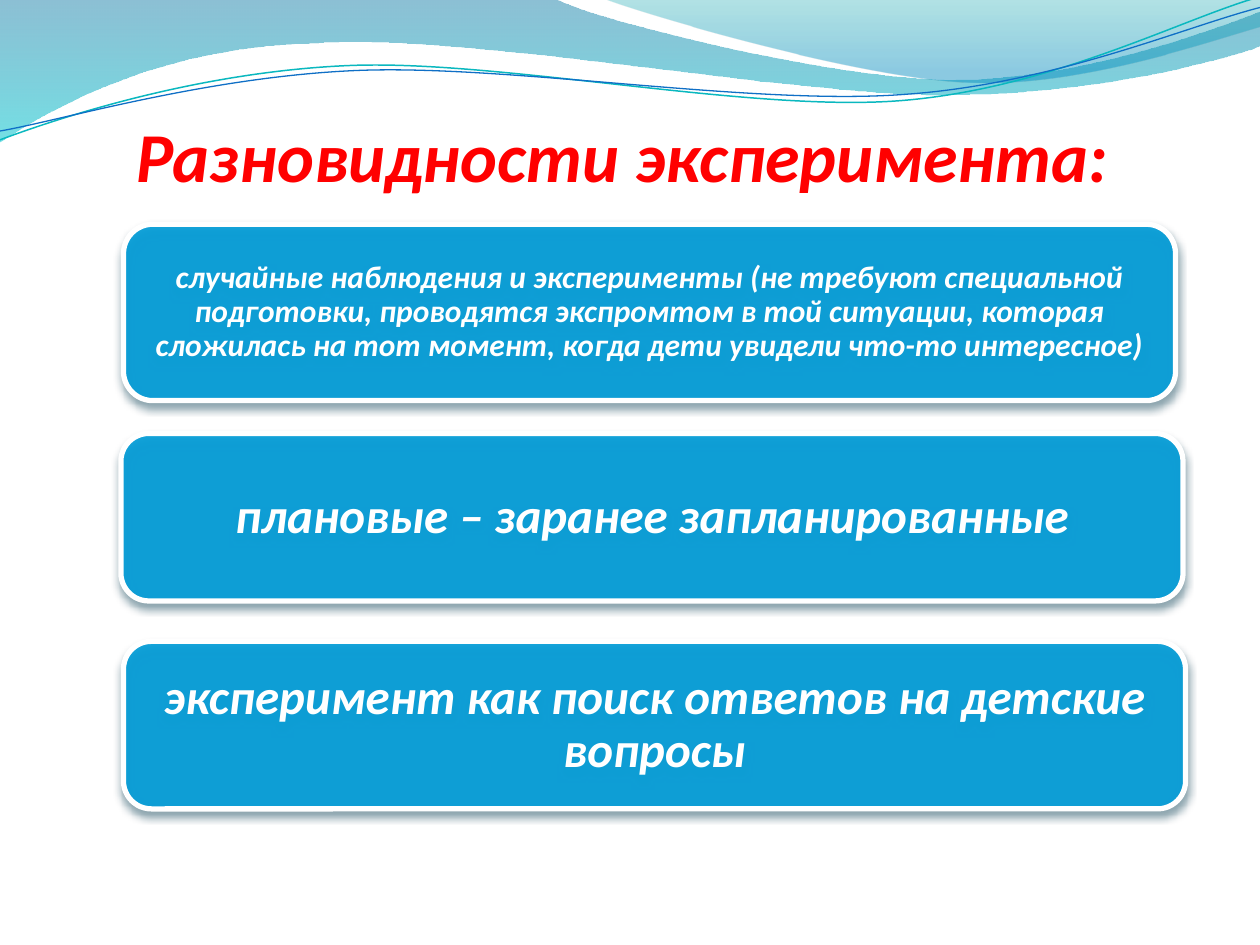
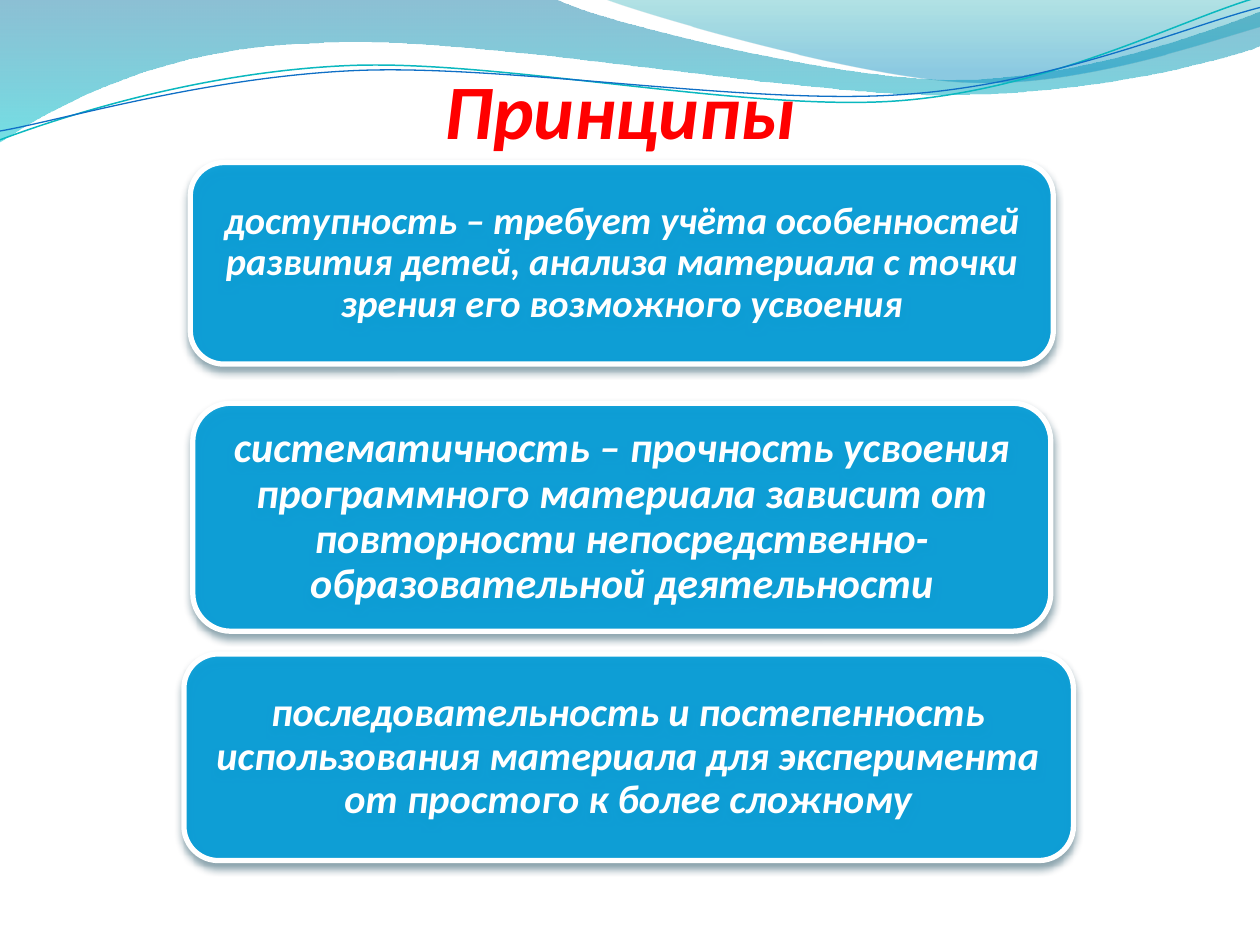
import math
from dataclasses import dataclass

from pptx import Presentation
from pptx import util as u
from pptx.dml import color
from pptx.enum import shapes, text
from pptx.oxml import parse_xml, ns

FONT = "Calibri"
COLORS = {
    "title": "FF0000", "card": "009DD9", "white": "FFFFFF", "shadow": "00374C",
    "band_top": "0074A1", "band_bottom": "00C6CF",
    "crest_top": "00A1A9", "crest_bottom": "008BBF",
    "teal_line": "0AB8BF", "blue_line": "0F6FC6",
}
LINE_TILT = -2.7

Point = tuple[float, float]


@dataclass
class Stop:
    color: str
    position: float
    opacity: int


@dataclass
class Wave:
    """Outline in inches: one point is a line, three points are a Bezier curve."""
    start: Point
    segments: list[tuple[Point, ...]]
    stops: tuple[Stop, ...] = ()
    line: str = ""
    line_width: float = 0
    tilt: float = 0
    pivot: Point = (0, 0)


@dataclass
class Card:
    box: tuple[float, float, float, float]
    text: str
    size: int
    inset: float


@dataclass
class Page:
    title: str
    title_box: tuple[float, float, float, float]
    title_size: int
    cards: list[Card]


WAVES = [
    Wave((0, 0), [
        ((4.4, -0.01),),
        ((4.76, 0.17), (6.64, 0.63), (7.58, 0.63)),
        ((8.53, 0.63), (9.58, 0.26), (10, 0.09)),
        ((10.01, 0.36),),
        ((9.83, 0.44), (8.7, 0.76), (7.46, 0.75)),
        ((6.22, 0.75), (3.82, 0.28), (2.57, 0.34)),
        ((1.29, 0.36), (0.46, 0.83), (-0.01, 1.13)),
        ((0, 0),),
    ], stops=(Stop("band_top", 0, 45), Stop("band_bottom", 1, 55))),
    Wave((4.79, -0.01), [
        ((5.09, 0.11), (6.82, 0.62), (7.69, 0.65)),
        ((8.56, 0.69), (9.61, 0.32), (10, 0.21)),
        ((10, 0),),
        ((4.79, -0.01),),
    ], stops=(Stop("crest_top", 0, 30), Stop("crest_bottom", 0.8, 45))),
    Wave((0, 1.11), [
        ((0.48, 0.93), (1.58, 0.57), (2.77, 0.52)),
        ((3.95, 0.47), (5.93, 0.89), (7.13, 0.8)),
        ((8.33, 0.71), (9.38, 0.15), (9.98, -0.02)),
    ], line="teal_line", line_width=0.85, tilt=LINE_TILT, pivot=(4.99, 0.58)),
    Wave((0, 1.04), [
        ((0.47, 0.96), (1.64, 0.61), (2.83, 0.56)),
        ((4.03, 0.51), (5.97, 0.84), (7.17, 0.75)),
        ((8.36, 0.67), (9.41, 0.21), (10, 0.06)),
    ], line="blue_line", line_width=0.75, tilt=LINE_TILT, pivot=(5, 0.59)),
]

PAGES = [
    Page("Разновидности эксперимента:", (0.98, 0.84, 8, 0.77), 40, [
        Card((0.98, 1.78, 8.35, 1.4),
             "случайные наблюдения и эксперименты (не требуют специальной "
             "подготовки, проводятся экспромтом в той ситуации, которая "
             "сложилась на тот момент, когда дети увидели что-то интересное)",
             18, 0.07),
        Card((0.96, 3.44, 8.43, 1.33), "плановые – заранее запланированные",
             28, 0.12),
        Card((0.98, 5.09, 8.43, 1.33),
             "эксперимент как поиск ответов на детские вопросы", 28, 0.12),
    ]),
    Page("Принципы", (3.43, 0.45, 3.01, 0.84), 44, [
        Card((1.51, 1.29, 6.85, 1.6),
             "доступность – требует учёта особенностей развития детей, "
             "анализа материала с точки зрения его возможного усвоения",
             22, 0.09),
        Card((1.53, 3.2, 6.81, 1.81),
             "систематичность – прочность усвоения программного материала "
             "зависит от повторности непосредственно-образовательной "
             "деятельности", 24, 0.1),
        Card((1.46, 5.19, 7.06, 1.64),
             "последовательность и постепенность использования материала для "
             "эксперимента от простого к более сложному", 23, 0.1),
    ]),
]


def rgb(name: str) -> color.RGBColor:
    return color.RGBColor.from_string(COLORS[name])


def set_opacity(color_element, percent: int) -> None:
    color_element.append(parse_xml(
        f'<a:alpha {ns.nsdecls("a")} val="{percent * 1000}"/>'))


def write_text(frame, words: str, *, size: int, tint: str, align, anchor,
               wrap: bool = True, spacing: float = 1.0) -> None:
    frame.word_wrap = wrap
    frame.vertical_anchor = anchor
    paragraph = frame.paragraphs[0]
    paragraph.alignment = align
    paragraph.line_spacing = spacing
    run = paragraph.add_run()
    run.text = words
    run.font.name = FONT
    run.font.size = u.Pt(size)
    run.font.bold = run.font.italic = True
    run.font.color.rgb = rgb(tint)


def level(point: Point, wave: Wave) -> tuple[u.Length, u.Length]:
    """Place a point as it lies before the wave is tilted about its pivot."""
    angle = math.radians(-wave.tilt)
    dx, dy = point[0] - wave.pivot[0], point[1] - wave.pivot[1]
    return (u.Inches(wave.pivot[0] + dx * math.cos(angle) - dy * math.sin(angle)),
            u.Inches(wave.pivot[1] + dx * math.sin(angle) + dy * math.cos(angle)))


def bend(outline, segments: list[tuple[Point, ...]]) -> None:
    """Join each run of three line points into one Bezier curve."""
    steps = iter(outline.element.xpath(".//a:path/a:lnTo"))
    for segment in segments:
        lines = [next(steps) for _ in segment]
        if len(lines) == 3:
            curve = parse_xml(f'<a:cubicBezTo {ns.nsdecls("a")}/>')
            lines[0].addprevious(curve)
            for line in lines:
                curve.append(line[0])
                line.getparent().remove(line)


def draw_wave(slide, wave: Wave):
    points = [point for segment in wave.segments for point in segment]
    builder = slide.shapes.build_freeform(*level(wave.start, wave))
    builder.add_line_segments([level(point, wave) for point in points],
                              close=bool(wave.stops))
    outline = builder.convert_to_shape()
    bend(outline, wave.segments)
    outline.rotation = wave.tilt
    outline.shadow.inherit = False
    if wave.stops:
        outline.line.fill.background()
        outline.fill.gradient()
        outline.fill.gradient_angle = 270
        for target, stop in zip(outline.fill.gradient_stops, wave.stops):
            target.color.rgb = rgb(stop.color)
            target.position = stop.position
        tints = outline.element.xpath("./p:spPr/a:gradFill//a:srgbClr")
        for tint, stop in zip(tints, wave.stops):
            set_opacity(tint, stop.opacity)
    else:
        outline.fill.background()
        outline.line.color.rgb = rgb(wave.line)
        outline.line.width = u.Pt(wave.line_width)
    return outline


def move_to_layout(outline, layout, shape_id: int) -> None:
    outline.element.xpath("./p:nvSpPr/p:cNvPr")[0].set("id", str(shape_id))
    layout.shapes.element.append(outline.element)


def draw_title(slide, page: Page) -> None:
    title = slide.shapes.title
    title.left, title.top, title.width, title.height = map(u.Inches, page.title_box)
    write_text(title.text_frame, page.title, size=page.title_size, tint="title",
               align=text.PP_ALIGN.LEFT, anchor=text.MSO_ANCHOR.TOP, wrap=False)
    title.text_frame.auto_size = text.MSO_AUTO_SIZE.SHAPE_TO_FIT_TEXT


def draw_card(slide, card: Card) -> None:
    panel = slide.shapes.add_shape(shapes.MSO_SHAPE.ROUNDED_RECTANGLE,
                                   *map(u.Inches, card.box))
    panel.fill.solid()
    panel.fill.fore_color.rgb = rgb("card")
    set_opacity(panel.element.xpath("./p:spPr/a:solidFill/a:srgbClr")[0], 90)
    panel.line.color.rgb = rgb("white")
    panel.line.width = u.Pt(3)

    # Soft shadow below the card
    panel.shadow.inherit = False
    panel.element.xpath("./p:spPr/a:effectLst")[0].append(parse_xml(
        f'<a:outerShdw {ns.nsdecls("a")} blurRad="{u.Pt(4.5)}" dist="{u.Pt(3)}" '
        f'dir="5400000" rotWithShape="0"><a:srgbClr val="{COLORS["shadow"]}">'
        '<a:alpha val="48000"/></a:srgbClr></a:outerShdw>'))

    frame = panel.text_frame
    frame.margin_left = frame.margin_right = u.Inches(card.inset)
    frame.margin_top = frame.margin_bottom = u.Inches(card.inset)
    write_text(frame, card.text, size=card.size, tint="white", spacing=0.9,
               align=text.PP_ALIGN.CENTER, anchor=text.MSO_ANCHOR.MIDDLE)


def main() -> None:
    deck = Presentation()
    deck.slide_width, deck.slide_height = u.Inches(10), u.Inches(7.5)
    layout = deck.slide_layouts.get_by_name("Title Only")
    slides = [deck.slides.add_slide(layout) for _ in PAGES]

    # Waves shared by all slides live on the layout
    for shape_id, wave in enumerate(WAVES, start=20):
        move_to_layout(draw_wave(slides[0], wave), layout, shape_id)

    # Titles and cards
    for slide, page in zip(slides, PAGES):
        draw_title(slide, page)
        for card in page.cards:
            draw_card(slide, card)

    deck.save("out.pptx")


if __name__ == "__main__":
    main()
